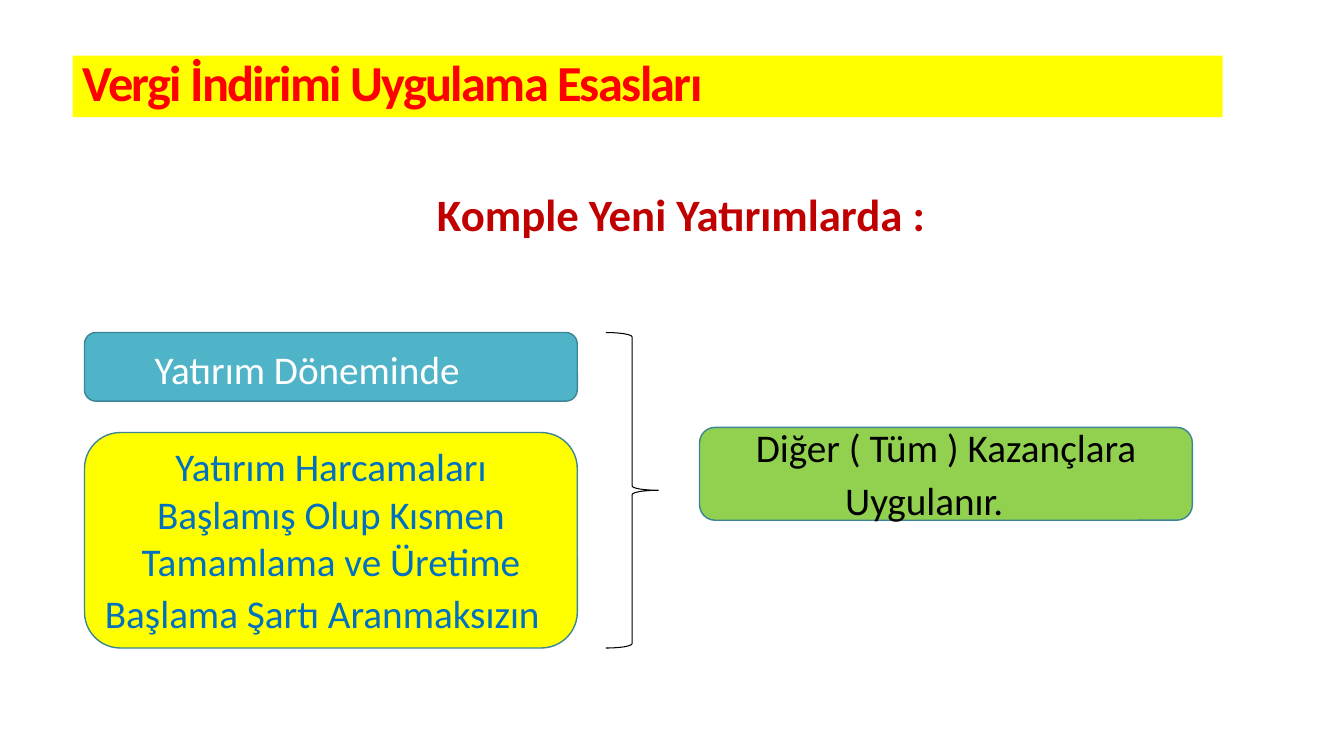
"""Build the slide on applying the tax reduction to new investments."""
from dataclasses import dataclass

from lxml import etree
from pptx import Presentation
from pptx import util as u
from pptx.dml.color import RGBColor
from pptx.enum import shapes, text
from pptx.oxml.ns import qn

FONT = "Calibri"
BOX_WIDTH = 12.42
LEFT = 2.13
TOP = 8.38
BOTTOM = 16.33


@dataclass
class Box:
    label: str
    left: float
    top: float
    height: float
    fill: str
    color: str


BOXES = [
    Box("Yatırım Döneminde", LEFT, TOP, 1.73, "50B4C8", "FFFFFF"),
    Box("Yatırım Harcamaları Başlamış Olup Kısmen Tamamlama ve Üretime "
        "Başlama Şartı Aranmaksızın", LEFT, 10.9, BOTTOM - 10.9, "FFFF00", "0070C0"),
    Box("Diğer ( Tüm ) Kazançlara Uygulanır.", 17.63, 10.77, 2.34, "92D050", "000000"),
]


def rgb(value: str) -> RGBColor:
    return RGBColor.from_string(value)


def place(sp, left: float, top: float, width: float, height: float) -> None:
    sp.left, sp.top, sp.width, sp.height = map(u.Cm, (left, top, width, height))


def format_run(r, size: float, color: str, bold: bool = False) -> None:
    r.font.name = FONT
    r.font.size = u.Pt(size)
    r.font.bold = bold
    r.font.color.rgb = rgb(color)


def add_shape(s, kind, left: float, top: float, width: float, height: float,
              line: str, weight: float):
    sp = s.shapes.add_shape(kind, *map(u.Cm, (left, top, width, height)))
    sp.shadow.inherit = False
    sp.line.color.rgb = rgb(line)
    sp.line.width = u.Pt(weight)
    return sp


def fill_placeholder(sp, label: str, size: float, color: str, align):
    tf = sp.text_frame
    tf.text = label
    tf.word_wrap = True
    tf.auto_size = text.MSO_AUTO_SIZE.NONE
    p = tf.paragraphs[0]
    p.alignment = align
    p.line_spacing = 0.85
    p.space_before = u.Pt(0)
    format_run(p.runs[0], size, color, True)
    return tf


def add_title(s) -> None:
    sp = s.shapes.title
    place(sp, 1.83, 1.4, 28.98, 1.55)
    sp.fill.solid()
    sp.fill.fore_color.rgb = rgb("FFFF00")
    tf = fill_placeholder(sp, "Vergi İndirimi Uygulama Esasları", 36, "FF0000",
                          text.PP_ALIGN.LEFT)
    tf.vertical_anchor = text.MSO_ANCHOR.MIDDLE
    tf.paragraphs[0].runs[0].font._element.set("spc", "-120")


def add_body(s) -> None:
    sp = s.placeholders[1]
    place(sp, 1.83, 2.95, 30.68, 15.65)
    tf = fill_placeholder(sp, "Komple Yeni Yatırımlarda :", 32, "C00000",
                          text.PP_ALIGN.CENTER)
    tf.vertical_anchor = text.MSO_ANCHOR.TOP
    tf.margin_top = u.Cm(1.95)
    ppr = tf.paragraphs[0]._p.get_or_add_pPr()
    ppr.set("marL", "0")
    ppr.set("indent", "0")
    etree.SubElement(ppr, qn("a:buNone"))


def add_box(s, box: Box) -> None:
    sp = add_shape(s, shapes.MSO_SHAPE.ROUNDED_RECTANGLE, box.left, box.top,
                   BOX_WIDTH, box.height, "3B8594", 1)
    sp.fill.solid()
    sp.fill.fore_color.rgb = rgb(box.fill)
    tf = sp.text_frame
    tf.text = box.label
    tf.word_wrap = True
    tf.vertical_anchor = text.MSO_ANCHOR.MIDDLE
    p = tf.paragraphs[0]
    p.alignment = text.PP_ALIGN.CENTER
    format_run(p.runs[0], 28, box.color)
    r = p.add_run()
    r.text = "\t"
    format_run(r, 32, box.color)


def main() -> None:
    prs = Presentation()
    prs.slide_width, prs.slide_height = u.Cm(33.87), u.Cm(19.05)
    s = prs.slides.add_slide(prs.slide_layouts[1])
    add_title(s)
    add_body(s)
    for box in BOXES:
        add_box(s, box)
    brace = add_shape(s, shapes.MSO_SHAPE.RIGHT_BRACE, 15.27, TOP, 1.32,
                      BOTTOM - TOP, "000000", 0.75)
    brace.fill.background()
    prs.save("out.pptx")


if __name__ == "__main__":
    main()
